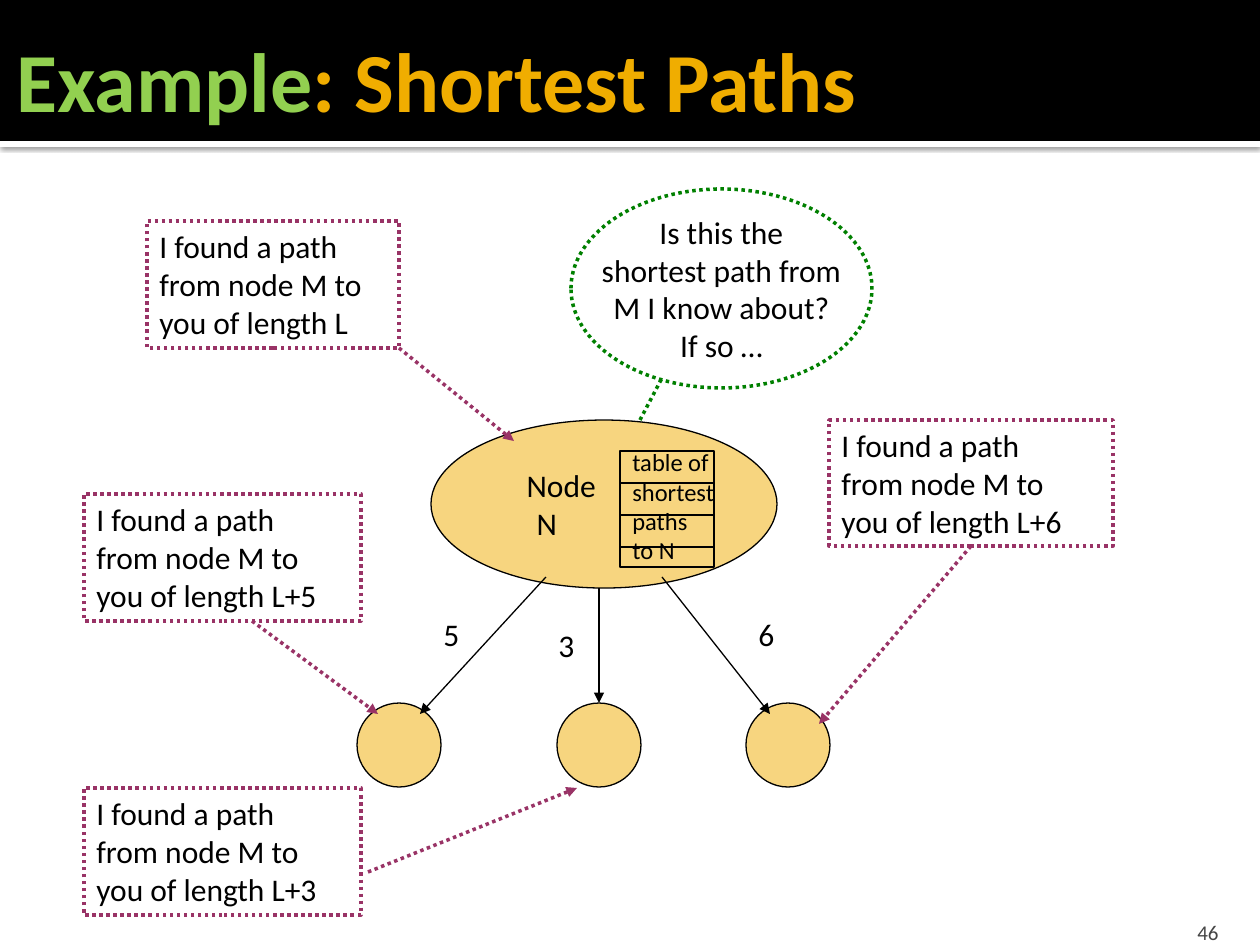
from pptx import Presentation
from pptx import util as u
from pptx.dml import color
from pptx.enum import dml, shapes, text
from pptx.oxml import ns
from lxml import etree

SCALE = 914400 / 126  # EMU in one px
COLORS = {
    "black": "000000", "white": "FFFFFF", "green": "92D050", "gold": "F0AD00",
    "plum": "993366", "forest": "008000", "grey": "454545",
}
LEFT, CENTER, RIGHT = text.PP_ALIGN.LEFT, text.PP_ALIGN.CENTER, text.PP_ALIGN.RIGHT
TOP, MIDDLE, BOTTOM = (text.MSO_ANCHOR.TOP, text.MSO_ANCHOR.MIDDLE,
                       text.MSO_ANCHOR.BOTTOM)
RECT, OVAL = shapes.MSO_SHAPE.RECTANGLE, shapes.MSO_SHAPE.OVAL


def px(length):
    return u.Emu(round(length * SCALE))


def rgb(name):
    return color.RGBColor.from_string(COLORS[name])


def add_xml(parent, tag, **attributes):
    return etree.SubElement(parent, ns.qn(tag), attributes)


class Diagram:
    font = "Calibri"

    def __init__(self, slide):
        self.slide = slide

    def style_run(self, span, size, ink, bold=False):
        span.font.name = self.font
        span.font.size = u.Pt(size)
        span.font.bold = bold
        span.font.color.rgb = rgb(ink)

    def set_words(self, box, words, size=18, ink="black", align=LEFT, anchor=TOP,
                  wrap=False):
        frame = box.text_frame
        frame.text = words
        frame.word_wrap = wrap
        frame.vertical_anchor = anchor
        for para in frame.paragraphs:
            para.alignment = align
            for span in para.runs:
                self.style_run(span, size, ink)

    def style_line(self, line, ink, width, dotted):
        line.color.rgb = rgb(ink)
        line.width = u.Pt(width)
        if dotted:
            line.dash_style = dml.MSO_LINE.ROUND_DOT

    def title(self, area, parts):
        box = self.slide.shapes.title
        box.left, box.top, box.width, box.height = map(px, area)
        frame = box.text_frame
        frame.auto_size = text.MSO_AUTO_SIZE.NONE
        frame.vertical_anchor = MIDDLE
        frame.margin_right = u.Inches(0.05)
        para = frame.paragraphs[0]
        para.alignment = LEFT
        for words, ink in parts:
            span = para.add_run()
            span.text = words
            self.style_run(span, 48, ink, bold=True)
        self.slide.shapes._spTree.append(box._element)  # in front of the bands

    def shape(self, kind, area, fill=None, alpha=None, ink=None, width=0.75,
              dotted=False):
        shape = self.slide.shapes.add_shape(kind, *map(px, area))
        shape.shadow.inherit = False
        if fill:
            shape.fill.solid()
            shape.fill.fore_color.rgb = rgb(fill)
            if alpha:
                hue = shape._element.spPr.find(".//" + ns.qn("a:srgbClr"))
                add_xml(hue, "a:alpha", val=str(alpha * 1000))
        else:
            shape.fill.background()
        if ink:
            self.style_line(shape.line, ink, width, dotted)
        else:
            shape.line.fill.background()
        return shape

    def cast_shadow(self, shape):
        effects = shape._element.spPr.find(ns.qn("a:effectLst"))
        shadow = add_xml(effects, "a:outerShdw", blurRad=str(u.Pt(2.5)),
                         dist=str(u.Pt(0.8)), dir="5400000", rotWithShape="0")
        hue = add_xml(shadow, "a:srgbClr", val=COLORS["black"])
        add_xml(hue, "a:alpha", val="60000")

    def node(self, area):
        return self.shape(OVAL, area, "gold", 50, "black")

    def line(self, start, end, ink="black", width=0.75, dotted=False, arrow=True):
        line = self.slide.shapes.add_connector(
            shapes.MSO_CONNECTOR.STRAIGHT, *map(px, start + end))
        self.style_line(line.line, ink, width, dotted)
        properties = line._element.spPr
        if arrow:
            add_xml(properties.find(ns.qn("a:ln")), "a:tailEnd", type="triangle")
        add_xml(properties, "a:effectLst")

    def label(self, area, words, **style):
        box = self.slide.shapes.add_textbox(*map(px, area))
        self.set_words(box, words, **style)
        return box

    def message(self, area, length, start, end):
        box = self.shape(RECT, area, ink="plum", width=2, dotted=True)
        words = f"I found a path\nfrom node M to\nyou of length {length}"
        self.set_words(box, words, wrap=True)
        self.line(start, end, "plum", 2, dotted=True)


def main():
    deck = Presentation()
    deck.slide_width, deck.slide_height = px(1260), px(945)
    diagram = Diagram(deck.slides.add_slide(deck.slide_layouts[5]))

    # Header bands, title and slide number
    diagram.cast_shadow(diagram.shape(RECT, (0, 141, 1260, 6), "white"))
    diagram.shape(RECT, (0, 0, 1260, 141), "black")
    diagram.title((4, 0, 1260, 157),
                  [("Example", "green"), (": Shortest Paths", "gold")])
    number = diagram.label((1130, 907, 101, 38), "46", size=12, ink="grey",
                           align=RIGHT, anchor=BOTTOM, wrap=True)
    number.text_frame.margin_bottom = 0

    # Node N
    hub = diagram.node((431, 420, 346, 168))
    diagram.set_words(hub, "Node\nN", anchor=MIDDLE, wrap=True)
    hub.text_frame.margin_left = px(45)
    hub.text_frame.paragraphs[1]._p.get_or_add_pPr().set("marL", str(px(10)))

    # Neighbours, edges and edge weights
    for left in (357, 557, 746):
        diagram.node((left, 703, 84, 84))
    for start, end, weight, corner in (
        ((546, 577), (420, 714), "5", (431, 609)),
        ((599, 588), (599, 703), "3", (546, 620)),
        ((662, 577), (770, 714), "6", (746, 609)),
    ):
        diagram.line(start, end)
        diagram.label(corner + (48, 63), weight)

    # Messages
    for area, length, start, end in (
        ((147, 221, 252, 127), "L", (399, 348), (514, 441)),
        ((84, 788, 277, 127), "L+3", (368, 872), (577, 788)),
        ((84, 494, 277, 127), "L+5", (252, 621), (378, 714)),
        ((829, 420, 284, 126), "L+6", (971, 546), (819, 724)),
    ):
        diagram.message(area, length, start, end)

    # Thought bubble
    bubble = diagram.shape(OVAL, (571, 189, 301, 199), ink="forest", width=2,
                           dotted=True)
    diagram.set_words(
        bubble, "Is this the\nshortest path from\nM I know about?\nIf so …",
        align=CENTER, anchor=MIDDLE)
    diagram.line((640, 420), (662, 378), "forest", 2, dotted=True, arrow=False)

    # Table of paths inside node N
    diagram.shape(RECT, (620, 451, 94, 116), ink="black")
    for row in range(1, 4):
        height = 451 + row * 32
        diagram.line((620, height), (714, height), arrow=False)
    diagram.label((620, 441, 112, 130), "table of\nshortest\npaths\nto N", size=14)

    deck.save("out.pptx")


if __name__ == "__main__":
    main()
